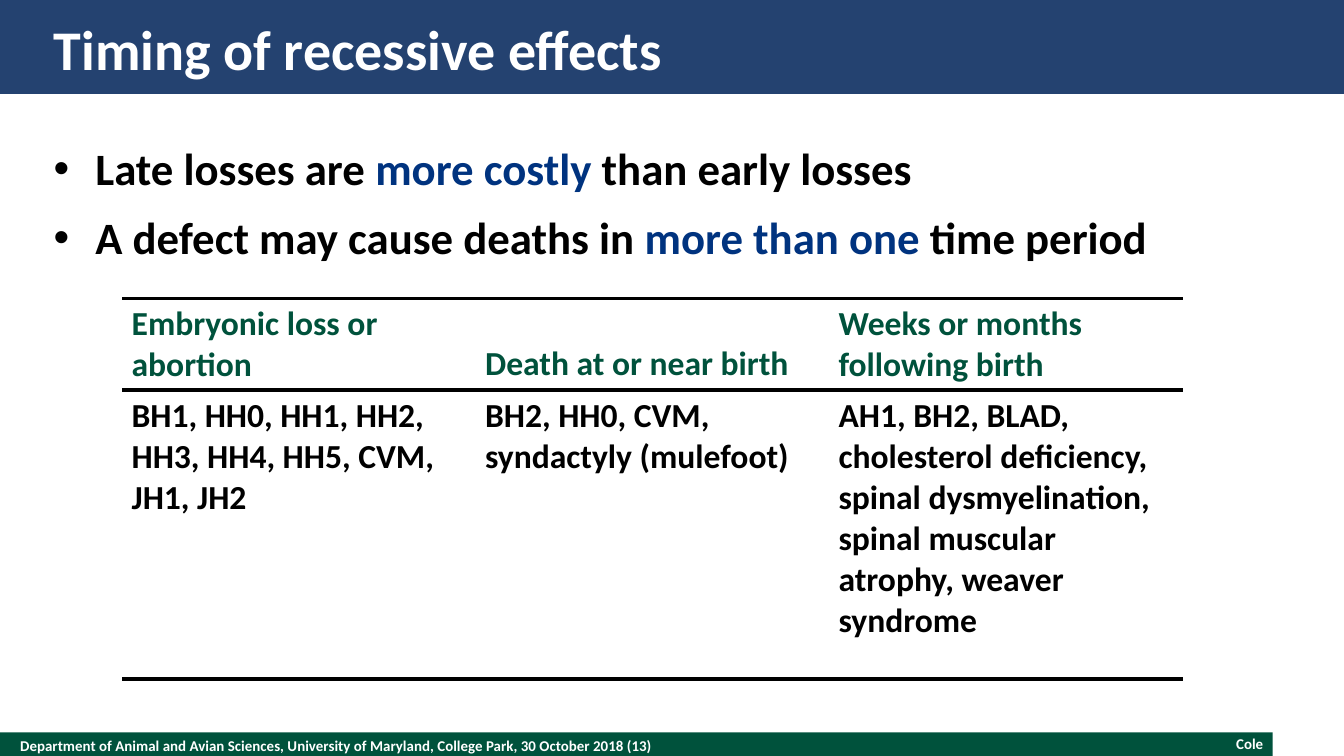
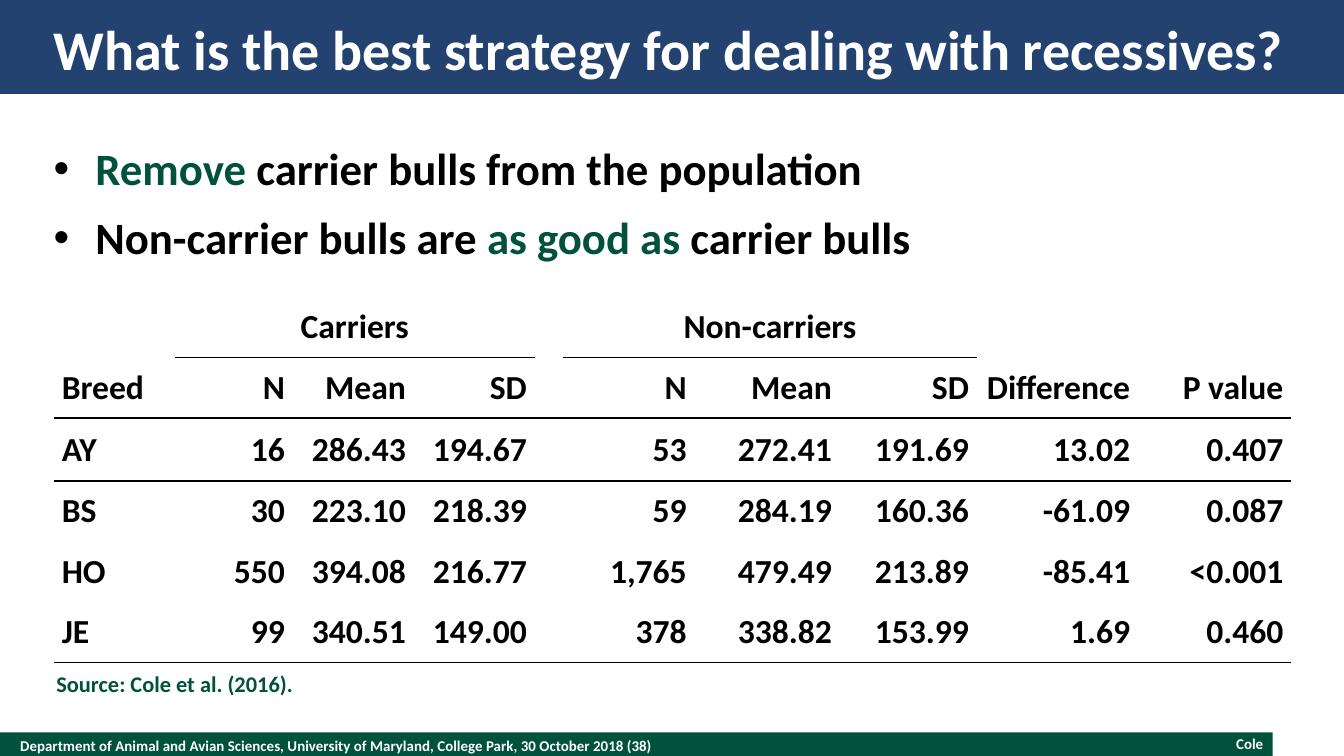
from dataclasses import dataclass

from lxml import etree
from pptx import Presentation
from pptx import util as u
from pptx.dml.color import RGBColor
from pptx.enum import shapes, text
from pptx.oxml import ns


@dataclass(frozen=True)
class Theme:
    font: str = "Calibri"
    white: str = "FFFFFF"
    black: str = "000000"
    green: str = "00523C"
    blue: str = "00337F"
    band: str = "244270"
    title: int = 30
    body: int = 24
    table: int = 18
    source: int = 12
    footer: int = 8


T = Theme()
LEFT, CENTER, RIGHT = text.PP_ALIGN.LEFT, text.PP_ALIGN.CENTER, text.PP_ALIGN.RIGHT
TOP, MIDDLE, BOTTOM = text.MSO_ANCHOR.TOP, text.MSO_ANCHOR.MIDDLE, text.MSO_ANCHOR.BOTTOM
NO_STYLE = "{2D5ABB26-0587-4C30-8999-92F81FD0307C}"


def add_runs(p, runs, size, align=LEFT):
    """Append (text, colour) runs to paragraph p."""
    p.alignment = align
    for words, colour in runs:
        r = p.add_run()
        r.text = words
        r.font.name, r.font.size, r.font.bold = T.font, u.Pt(size), True
        r.font.color.rgb = RGBColor.from_string(colour)


def style_cell(cell, inset_x, inset_y, anchor, sides, width):
    """Clear the fill and rule the given sides, named in the order T, B."""
    cell.fill.background()
    cell.margin_left = cell.margin_right = u.Inches(inset_x)
    cell.margin_top = cell.margin_bottom = u.Inches(inset_y)
    cell.vertical_anchor = anchor
    tcPr = cell._tc.get_or_add_tcPr()
    for i, side in enumerate(sides):
        ln = etree.Element(ns.qn(f"a:ln{side}"), w=str(u.Pt(width)))
        fill = etree.SubElement(ln, ns.qn("a:solidFill"))
        etree.SubElement(fill, ns.qn("a:srgbClr"), val=T.black)
        tcPr.insert(i, ln)


prs = Presentation()
prs.slide_width, prs.slide_height = u.Inches(10), u.Inches(10 * 9 / 16)

# Title, page number, bullets
pages = [
    ("Timing of recessive effects", 13, [
        [("Late losses are ", T.black), ("more costly ", T.blue), ("than early losses", T.black)],
        [("A defect may cause deaths in ", T.black), ("more than one ", T.blue),
         ("time period", T.black)],
    ]),
    ("What is the best strategy for dealing with recessives?", 38, [
        [("Remove ", T.green), ("carrier bulls from the population", T.black)],
        [("Non-carrier bulls are ", T.black), ("as good as ", T.green),
         ("carrier bulls", T.black)],
    ]),
]

for title, number, bullets in pages:
    s = prs.slides.add_slide(prs.slide_layouts[6])
    for box, colour in [((0, 5.45, 9.47, 0.2), T.green), ((0, 0, 10, 0.7), T.band)]:
        sp = s.shapes.add_shape(shapes.MSO_SHAPE.RECTANGLE, *map(u.Inches, box))
        sp.shadow.inherit = False
        sp.fill.solid()
        sp.fill.fore_color.rgb = RGBColor.from_string(colour)
        sp.line.fill.background()

    footer = ("Department of Animal and Avian Sciences, University of Maryland, "
              f"College Park, 30 October 2018 ({number})")
    for box, paragraphs, size, align, anchor in [
        ((0.15, 5.45, 6.5, 0.2), [[(footer, T.white)]], T.footer, LEFT, MIDDLE),
        ((7.2, 5.47, 2.2, 0.13), [[("Cole", T.white)]], T.footer, RIGHT, MIDDLE),
        ((0.4, 0.1, 9.2, 0.52), [[(title, T.white)]], T.title, LEFT, MIDDLE),
        ((0.4, 1.1, 9.2, 4), bullets, T.body, LEFT, TOP),
    ]:
        tf = s.shapes.add_textbox(*map(u.Inches, box)).text_frame
        tf.word_wrap = True
        tf.vertical_anchor = anchor
        tf.margin_left = tf.margin_right = tf.margin_top = tf.margin_bottom = 0
        for i, runs in enumerate(paragraphs):
            p = tf.add_paragraph() if i else tf.paragraphs[0]
            if paragraphs is bullets:
                pPr = p._p.get_or_add_pPr()
                pPr.set("marL", str(u.Inches(0.31)))
                pPr.set("indent", str(u.Inches(-0.31)))
                colour = etree.SubElement(pPr, ns.qn("a:buClr"))
                etree.SubElement(colour, ns.qn("a:srgbClr"), val=T.black)
                etree.SubElement(pPr, ns.qn("a:buFont"), typeface="Arial")
                etree.SubElement(pPr, ns.qn("a:buChar"), char="•")
                p.line_spacing, p.space_after = u.Pt(25), u.Pt(12)
            add_runs(p, runs, size, align)

timing_rows = [
    ["Embryonic loss or abortion", "Death at or near birth", "Weeks or months following birth"],
    ["BH1, HH0, HH1, HH2, HH3, HH4, HH5, CVM, JH1, JH2",
     "BH2, HH0, CVM, syndactyly (mulefoot)",
     "AH1, BH2, BLAD, cholesterol deficiency, spinal dysmyelination, "
     "spinal muscular atrophy, weaver syndrome"],
]
breed_rows = [
    ["", "Carriers", "", "", "", "Non-carriers", "", "", "", ""],
    ["Breed", "N", "Mean", "SD", "", "N", "Mean", "SD", "Difference", "P value"],
    ["AY", "16", "286.43", "194.67", "", "53", "272.41", "191.69", "13.02", "0.407"],
    ["BS", "30", "223.10", "218.39", "", "59", "284.19", "160.36", "-61.09", "0.087"],
    ["HO", "550", "394.08", "216.77", "", "1,765", "479.49", "213.89", "-85.41", "<0.001"],
    ["JE", "99", "340.51", "149.00", "", "378", "338.82", "153.99", "1.69", "0.460"],
]
breed_widths = [0.9, 0.88, 0.9, 0.9, 0.21, 0.98, 1.08, 1.02, 1.2, 1.14]
breed_heights = [0.45, 0.45, 0.47, 0.45, 0.45, 0.45]

tables = []
for s, rows, widths, heights, box in [
    (prs.slides[0], timing_rows, [2.63] * 3, [0.67, 2.15], (0.91, 2.22, 7.89, 2.82)),
    (prs.slides[1], breed_rows, breed_widths, breed_heights, (0.4, 2.21, 9.2, 2.72)),
]:
    table = s.shapes.add_table(len(rows), len(widths), *map(u.Inches, box)).table
    table.first_row = table.horz_banding = False
    table._tbl.tblPr.find(ns.qn("a:tableStyleId")).text = NO_STYLE
    for column, width in zip(table.columns, widths):
        column.width = u.Inches(width)
    for row, height in zip(table.rows, heights):
        row.height = u.Inches(height)
    tables.append(table)
timing, breeds = tables

for i, row in enumerate(timing_rows):
    for j, words in enumerate(row):
        cell = timing.cell(i, j)
        style_cell(cell, 0.07, 0.04, TOP if i else BOTTOM, "B" if i else "TB", 2.25)
        add_runs(cell.text_frame.paragraphs[0], [(words, T.black if i else T.green)], T.table)

group_columns = {1, 2, 3, 5, 6, 7}
ruled_rows = {1, 2, 5}
for first in (1, 5):
    breeds.cell(0, first).merge(breeds.cell(0, first + 2))
for i, row in enumerate(breed_rows):
    for j, words in enumerate(row):
        cell = breeds.cell(i, j)
        ruled = i in ruled_rows or (i == 0 and j in group_columns)
        style_cell(cell, 0.06, 0, MIDDLE, "B" if ruled else "", 1)
        if words:
            align = CENTER if i == 0 else RIGHT if j else LEFT
            add_runs(cell.text_frame.paragraphs[0], [(words, T.black)], T.table, align)

source_box = map(u.Inches, (0.29, 4.94, 1.99, 0.3))
tf = prs.slides[1].shapes.add_textbox(*source_box).text_frame
tf.word_wrap = False
tf.auto_size = text.MSO_AUTO_SIZE.SHAPE_TO_FIT_TEXT
add_runs(tf.paragraphs[0], [("Source: Cole et al. (2016).", T.green)], T.source, RIGHT)

prs.save("out.pptx")
